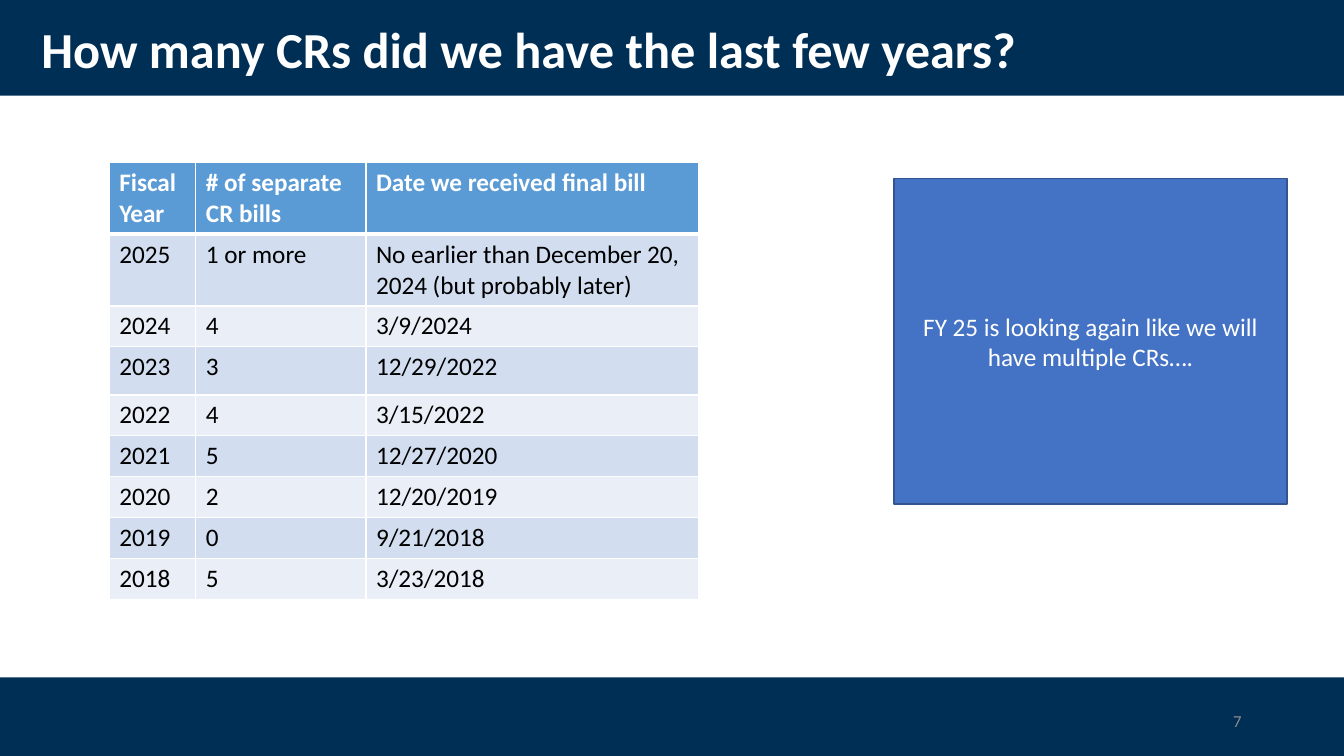
from lxml import etree
from pptx import Presentation
from pptx.dml.color import RGBColor
from pptx.enum import shapes, text
from pptx.oxml import ns
from pptx.util import Pt

FONT = "Calibri"
COLORS = {
    "navy": "002F56", "white": "FFFFFF", "black": "000000", "gray": "8C8C8C",
    "header": "5B9BD5", "odd_row": "D2DEEF", "even_row": "EAEFF7",
    "callout": "4472C4", "callout_line": "325491",
}
SLIDE_WIDTH, SLIDE_HEIGHT = 960, 540
COLUMN_WIDTHS = [61.9, 121.5, 237.6]
TWO_LINE_ROW, ONE_LINE_ROW, TALL_ROW = 50.8, 29.2, 34.4
ROW_HEIGHTS = [TWO_LINE_ROW] * 2 + [ONE_LINE_ROW, TALL_ROW] + [ONE_LINE_ROW] * 5
CR_ROWS = [
    ("Fiscal Year", "# of separate CR bills", "Date we received final bill"),
    ("2025", "1 or more", "No earlier than December 20, 2024 (but probably later)"),
    ("2024", "4", "3/9/2024"),
    ("2023", "3", "12/29/2022"),
    ("2022", "4", "3/15/2022"),
    ("2021", "5", "12/27/2020"),
    ("2020", "2", "12/20/2019"),
    ("2019", "0", "9/21/2018"),
    ("2018", "5", "3/23/2018"),
]


def color(name):
    return RGBColor.from_string(COLORS[name])


def write(frame, words, size, color_name, bold=False,
          align=text.PP_ALIGN.LEFT, anchor=text.MSO_ANCHOR.MIDDLE):
    frame.word_wrap = True
    frame.auto_size = text.MSO_AUTO_SIZE.NONE
    frame.vertical_anchor = anchor
    paragraph = frame.paragraphs[0]
    paragraph.alignment = align
    run = paragraph.add_run()
    run.text = words
    run.font.name = FONT
    run.font.size = Pt(size)
    run.font.bold = bold
    run.font.color.rgb = color(color_name)
    return paragraph


def add_box(slide, left, top, width, height, fill, line=None):
    shape = slide.shapes.add_shape(shapes.MSO_SHAPE.RECTANGLE, Pt(left), Pt(top),
                                   Pt(width), Pt(height))
    shape.shadow.inherit = False
    shape.fill.solid()
    shape.fill.fore_color.rgb = color(fill)
    if line:
        shape.line.color.rgb = color(line)
        shape.line.width = Pt(1)
    else:
        shape.line.fill.background()
    return shape


def add_band(slide, top, height):
    band = add_box(slide, 0, top, SLIDE_WIDTH, height, "navy")
    # Keep the bands behind the title placeholder
    slide.shapes._spTree.insert(2, band._element)


def add_title(slide, words):
    title = slide.shapes.title
    title.left, title.top, title.width, title.height = Pt(22.3), Pt(13), Pt(828), Pt(49)
    paragraph = write(title.text_frame, words, 36, "white", bold=True)
    paragraph.line_spacing = 0.9


def set_border(cell, side, width):
    properties = cell._tc.get_or_add_tcPr()
    line = etree.SubElement(properties, ns.qn(f"a:ln{side}"), w=str(Pt(width)))
    fill = etree.SubElement(line, ns.qn("a:solidFill"))
    etree.SubElement(fill, ns.qn("a:srgbClr"), val=COLORS["white"])


def format_cell(cell, words, row):
    is_header = row == 0
    widths = {"L": 1, "R": 1, "T": 3 if row == 1 else 1, "B": 3 if is_header else 1}
    for side, width in widths.items():
        set_border(cell, side, width)
    cell.fill.solid()
    fill = "header" if is_header else "odd_row" if row % 2 else "even_row"
    cell.fill.fore_color.rgb = color(fill)
    cell.vertical_anchor = text.MSO_ANCHOR.TOP
    run = cell.text_frame.paragraphs[0].add_run()
    run.text = words
    run.font.name = FONT
    run.font.size = Pt(18)
    run.font.bold = is_header
    run.font.color.rgb = color("white" if is_header else "black")


def add_cr_table(slide, left, top):
    table = slide.shapes.add_table(len(CR_ROWS), len(COLUMN_WIDTHS), Pt(left), Pt(top),
                                   Pt(sum(COLUMN_WIDTHS)), Pt(sum(ROW_HEIGHTS))).table
    for column, width in zip(table.columns, COLUMN_WIDTHS):
        column.width = Pt(width)
    for index, (row, height, values) in enumerate(zip(table.rows, ROW_HEIGHTS, CR_ROWS)):
        row.height = Pt(height)
        for cell, words in zip(row.cells, values):
            format_cell(cell, words, index)


def add_page_number(slide, number):
    box = slide.shapes.add_textbox(Pt(678), Pt(500.5), Pt(216), Pt(28.8))
    write(box.text_frame, number, 12, "gray", align=text.PP_ALIGN.RIGHT)


def add_callout(slide, words):
    callout = add_box(slide, 638.6, 127.4, 280.8, 232.6, "callout", "callout_line")
    write(callout.text_frame, words, 18, "white", align=text.PP_ALIGN.CENTER)


def main():
    presentation = Presentation()
    presentation.slide_width, presentation.slide_height = Pt(SLIDE_WIDTH), Pt(SLIDE_HEIGHT)
    title_only = presentation.slide_layouts[5]
    slide = presentation.slides.add_slide(title_only)

    # Header and footer bands with the title
    add_band(slide, 0, 68.4)
    add_band(slide, 483.8, SLIDE_HEIGHT - 483.8)
    add_title(slide, "How many CRs did we have the last few years?")

    # Table of continuing resolutions by fiscal year
    add_cr_table(slide, 78, 116.2)

    # Page number and outlook
    add_page_number(slide, "7")
    add_callout(slide, "FY 25 is looking again like we will have multiple CRs….")

    presentation.save("out.pptx")


if __name__ == "__main__":
    main()
